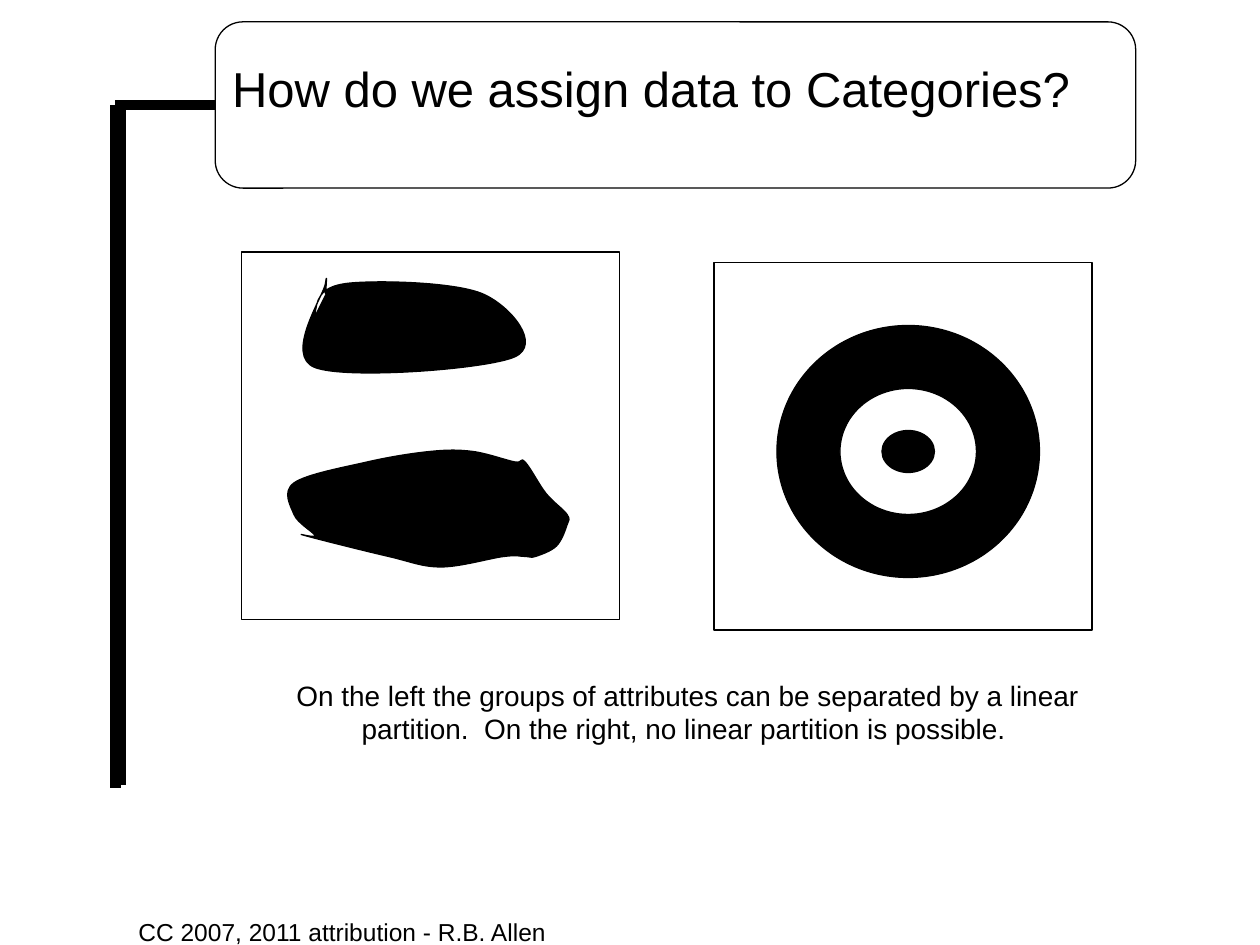
import pptx
import pptx.dml.color
import pptx.enum.shapes
import pptx.enum.text
import pptx.oxml.ns
import pptx.util
from lxml import etree

Pt = pptx.util.Pt
qn = pptx.oxml.ns.qn
SHAPE = pptx.enum.shapes.MSO_SHAPE
ALIGN = pptx.enum.text.PP_ALIGN
COLORS = {"ink": "000000", "paper": "FFFFFF"}
PANEL_SIZE = (216, 210)
OPEN_BLOB = [(42, 36), (60, 18), (138, 24), (156, 60), (42, 66), (48, 18), (48, 24)]
CLOSED_BLOB = [
    (42, 162), (30, 150), (30, 132), (72, 120), (108, 114), (132, 114),
    (156, 120), (162, 120), (174, 138), (186, 150), (186, 156), (180, 168),
    (168, 174), (162, 174), (150, 174), (114, 180), (84, 174), (36, 162),
]
RINGS = [
    ((36, 36, 150, 144), "ink"),
    ((72, 72, 78, 72), "paper"),
    ((96, 96, 30, 24), "ink"),
]


def color(name):
    return pptx.dml.color.RGBColor.from_string(COLORS[name])


def style_shape(shape, fill=None):
    shape.shadow.inherit = False
    if fill:
        shape.fill.solid()
        shape.fill.fore_color.rgb = color(fill)
    else:
        shape.fill.background()
    shape.line.color.rgb = color("ink")
    shape.line.width = Pt(0.75)


def add_outline(shapes, kind, box, fill=None):
    shape = shapes.add_shape(kind, *map(Pt, box))
    style_shape(shape, fill)
    return shape


def add_bar(slide, start, end):
    bar = slide.shapes.add_connector(
        pptx.enum.shapes.MSO_CONNECTOR.STRAIGHT, *map(Pt, start + end))
    bar.line.color.rgb = color("ink")
    bar.line.width = Pt(6)
    etree.SubElement(bar._element.spPr, qn("a:effectLst"))
    return bar


def add_text(slide, box, text, size, align=ALIGN.LEFT):
    frame = slide.shapes.add_textbox(*map(Pt, box)).text_frame
    frame.word_wrap = True
    paragraph = frame.paragraphs[0]
    paragraph.alignment = align
    run = paragraph.add_run()
    run.text = text
    for name, value in {"size": Pt(size), "name": "Arial"}.items():
        setattr(run.font, name, value)
    run.font.color.rgb = color("ink")


def midpoint(start, end):
    return tuple((a + b) / 2 for a, b in zip(start, end))


def curve_points(knots, closed):
    """Return the start, then two handles and an end for each Catmull-Rom segment."""
    count = len(knots)

    def handle(index, sign):
        before, after = knots[index - 1], knots[(index + 1) % count]
        return tuple(k + sign * (b - a) / 6
                     for k, a, b in zip(knots[index], before, after))

    points = [knots[0]]
    for i in range(count if closed else count - 1):
        j = (i + 1) % count
        first, second = handle(i, 1), handle(j, -1)
        if not closed and i == 0:
            first = midpoint(knots[i], second)
        if not closed and j == count - 1:
            second = midpoint(first, knots[j])
        points += [first, second, knots[j]]
    return points


def bend_lines(shape):
    """Turn each three line segments of a freeform into one Bezier segment."""
    lines = list(shape._element.iter(qn("a:lnTo")))
    for first, second, last in zip(lines[::3], lines[1::3], lines[2::3]):
        curve = etree.Element(qn("a:cubicBezTo"))
        first.addprevious(curve)
        for line in (first, second, last):
            curve.append(line[0])
            line.getparent().remove(line)


def add_blob(shapes, left, top, knots, closed):
    points = [(Pt(left + x), Pt(top + y)) for x, y in curve_points(knots, closed)]
    builder = shapes.build_freeform(*points[0], scale=1.0)
    builder.add_line_segments(points[1:], close=False)
    shape = builder.convert_to_shape()
    bend_lines(shape)
    if closed:
        outline = next(shape._element.iter(qn("a:path")))
        etree.SubElement(outline, qn("a:close"))
    style_shape(shape, "ink")


def add_panel(slide, left, top):
    shapes = slide.shapes.add_group_shape().shapes
    add_outline(shapes, SHAPE.RECTANGLE, (left, top) + PANEL_SIZE)
    return shapes


def add_separable_panel(slide, left, top):
    shapes = add_panel(slide, left, top)
    add_blob(shapes, left, top, OPEN_BLOB, closed=False)
    add_blob(shapes, left, top, CLOSED_BLOB, closed=True)


def add_ring_panel(slide, left, top):
    shapes = add_panel(slide, left, top)
    for (x, y, width, height), fill in RINGS:
        add_outline(shapes, SHAPE.OVAL, (left + x, top + y, width, height), fill)


def add_title_frame(slide, left, top, width, height):
    middle = top + height / 2
    post = left - 57
    add_bar(slide, (post + 3.25, 448.5), (post + 3.25, middle - 0.5))
    arm = add_bar(slide, (post, middle), (left, middle))
    frame = add_outline(slide.shapes, SHAPE.FLOWCHART_ALTERNATE_PROCESS,
                        (left, top, width, height))
    arm.end_connect(frame, 1)
    add_bar(slide, (post, 450), (post, middle))


def main():
    presentation = pptx.Presentation()
    presentation.slide_width, presentation.slide_height = Pt(720), Pt(540)
    slide = presentation.slides.add_slide(presentation.slide_layouts[6])
    add_title_frame(slide, 123, 12.5, 526, 95)
    add_text(slide, (72, 520.75, 402, 19.5), "CC 2007, 2011 attribution - R.B. Allen", 14)
    add_text(slide, (48, 30, 648, 90),
             "How do we assign data to Categories?", 28, ALIGN.CENTER)
    add_separable_panel(slide, 138, 144)
    add_ring_panel(slide, 408, 150)
    add_text(slide, (138, 384, 510, 46),
             "On the left the groups of attributes can be separated by a linear "
             "partition.  On the right, no linear partition is possible. ",
             16, ALIGN.CENTER)
    presentation.save("out.pptx")


if __name__ == "__main__":
    main()
